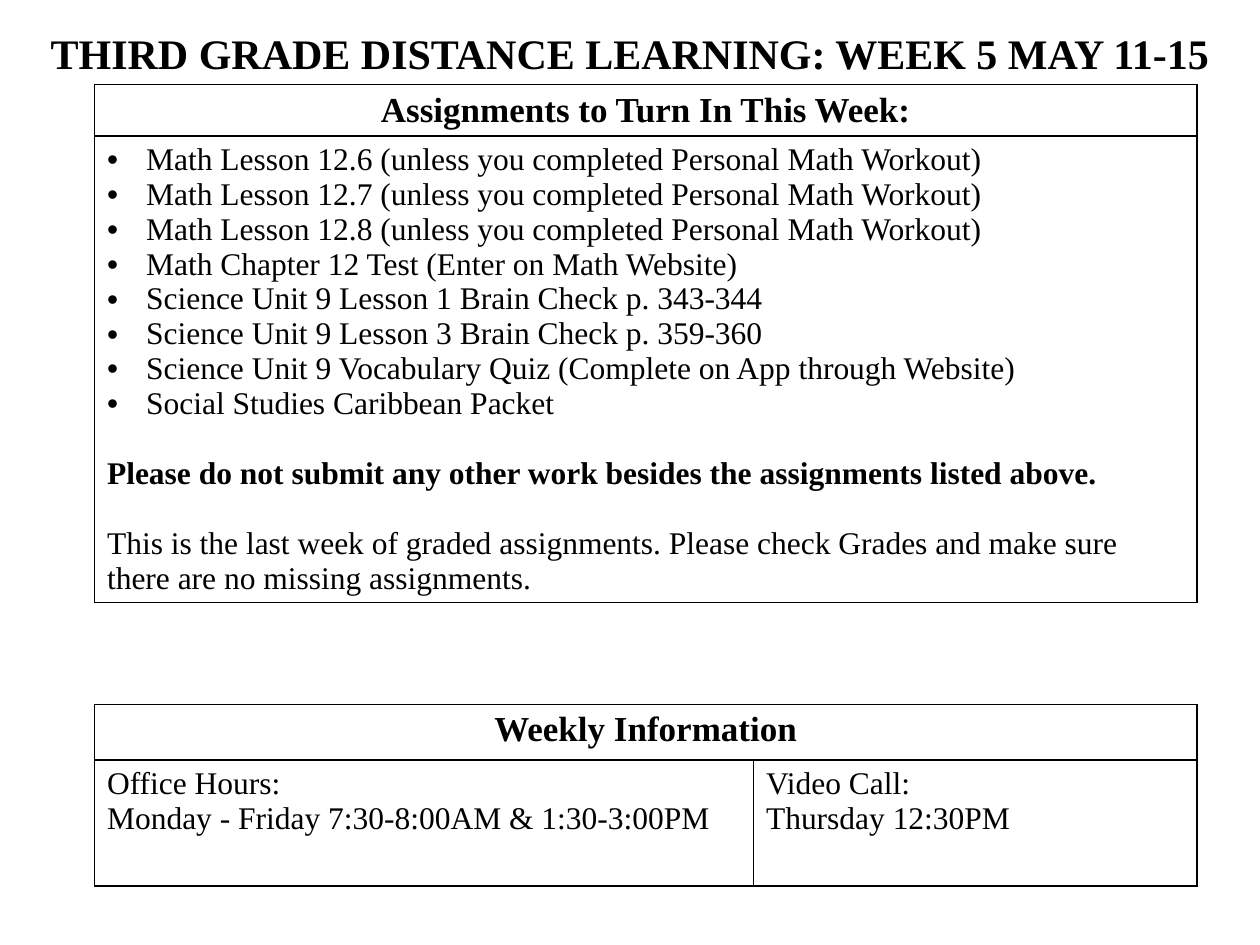
import pptx
import pptx.util
import pptx.dml.color
import pptx.enum.text
import pptx.oxml
import pptx.oxml.ns

Inches = pptx.util.Inches
Pt = pptx.util.Pt
BLACK = pptx.dml.color.RGBColor(0, 0, 0)
WHITE = pptx.dml.color.RGBColor(255, 255, 255)
CENTER = pptx.enum.text.PP_ALIGN.CENTER
FONT = "Times New Roman"
LEFT = 0.75


def write_lines(frame, lines, size, bold=False, align=None):
    frame.text = "\n".join(lines)
    for para in frame.paragraphs:
        para.alignment = align
        for span in para.runs:
            span.font.name = FONT
            span.font.size = Pt(size)
            span.font.bold = bold
            span.font.color.rgb = BLACK


def add_grid(top, widths, heights):
    frame = slide.shapes.add_table(
        len(heights), len(widths), Inches(LEFT), Inches(top),
        Inches(sum(widths)), Inches(sum(heights)))
    table = frame.table
    table.first_row = False
    table.horz_banding = False
    for column, width in zip(table.columns, widths):
        column.width = Inches(width)
    for row, height in zip(table.rows, heights):
        row.height = Inches(height)
    for cell in table.iter_cells():
        properties = cell._tc.get_or_add_tcPr()
        for edge in ("lnL", "lnR", "lnT", "lnB"):
            properties.append(pptx.oxml.parse_xml(
                f'<a:{edge} {pptx.oxml.ns.nsdecls("a")} w="{Pt(1)}"><a:solidFill>'
                f'<a:srgbClr val="{BLACK}"/></a:solidFill></a:{edge}>'))
        cell.fill.solid()
        cell.fill.fore_color.rgb = WHITE
    return table


deck = pptx.Presentation()
deck.slide_width = Inches(10)
deck.slide_height = Inches(7.5)
slide = deck.slides.add_slide(deck.slide_layouts[5])

title = slide.shapes.title
title.left, title.top = Inches(0), Inches(0.17)
title.width, title.height = Inches(10), Inches(0.5)
write_lines(title.text_frame, ["THIRD GRADE DISTANCE LEARNING: WEEK 5 MAY 11-15"],
            24, True, CENTER)

tasks = [f"Math Lesson 12.{number} (unless you completed Personal Math Workout)"
         for number in (6, 7, 8)]
tasks += [
    "Math Chapter 12 Test (Enter on Math Website)",
    "Science Unit 9 Lesson 1 Brain Check p. 343-344",
    "Science Unit 9 Lesson 3 Brain Check p. 359-360",
    "Science Unit 9 Vocabulary Quiz (Complete on App through Website)",
    "Social Studies Caribbean Packet",
]
notes = [
    "Please do not submit any other work besides the assignments listed above.",
    "This is the last week of graded assignments. Please check Grades and make sure "
    "there are no missing assignments.",
]

assignments = add_grid(0.67, [8.75], [0.41, 3.7])
write_lines(assignments.cell(0, 0).text_frame, ["Assignments to Turn In This Week:"],
            20, True, CENTER)
body = assignments.cell(1, 0).text_frame
write_lines(body, tasks + notes, 18)
for para in body.paragraphs[:len(tasks)]:
    properties = para._p.get_or_add_pPr()
    properties.set("marL", str(Inches(0.31)))
    properties.set("indent", str(-Inches(0.31)))
    properties.append(pptx.oxml.parse_xml(
        f'<a:buFont {pptx.oxml.ns.nsdecls("a")} typeface="Arial"/>'))
    properties.append(pptx.oxml.parse_xml(
        f'<a:buChar {pptx.oxml.ns.nsdecls("a")} char="•"/>'))
for para in body.paragraphs[len(tasks):]:
    para.space_before = Pt(20)
body.paragraphs[len(tasks)].runs[0].font.bold = True

information = add_grid(5.59, [5.23, 3.52], [0.44, 1])
information.cell(0, 0).merge(information.cell(0, 1))
write_lines(information.cell(0, 0).text_frame, ["Weekly Information"], 20, True, CENTER)
details = [
    ["Office Hours:", "Monday - Friday 7:30-8:00AM & 1:30-3:00PM"],
    ["Video Call:", "Thursday 12:30PM"],
]
for column, lines in enumerate(details):
    write_lines(information.cell(1, column).text_frame, lines, 18)

deck.save("out.pptx")
